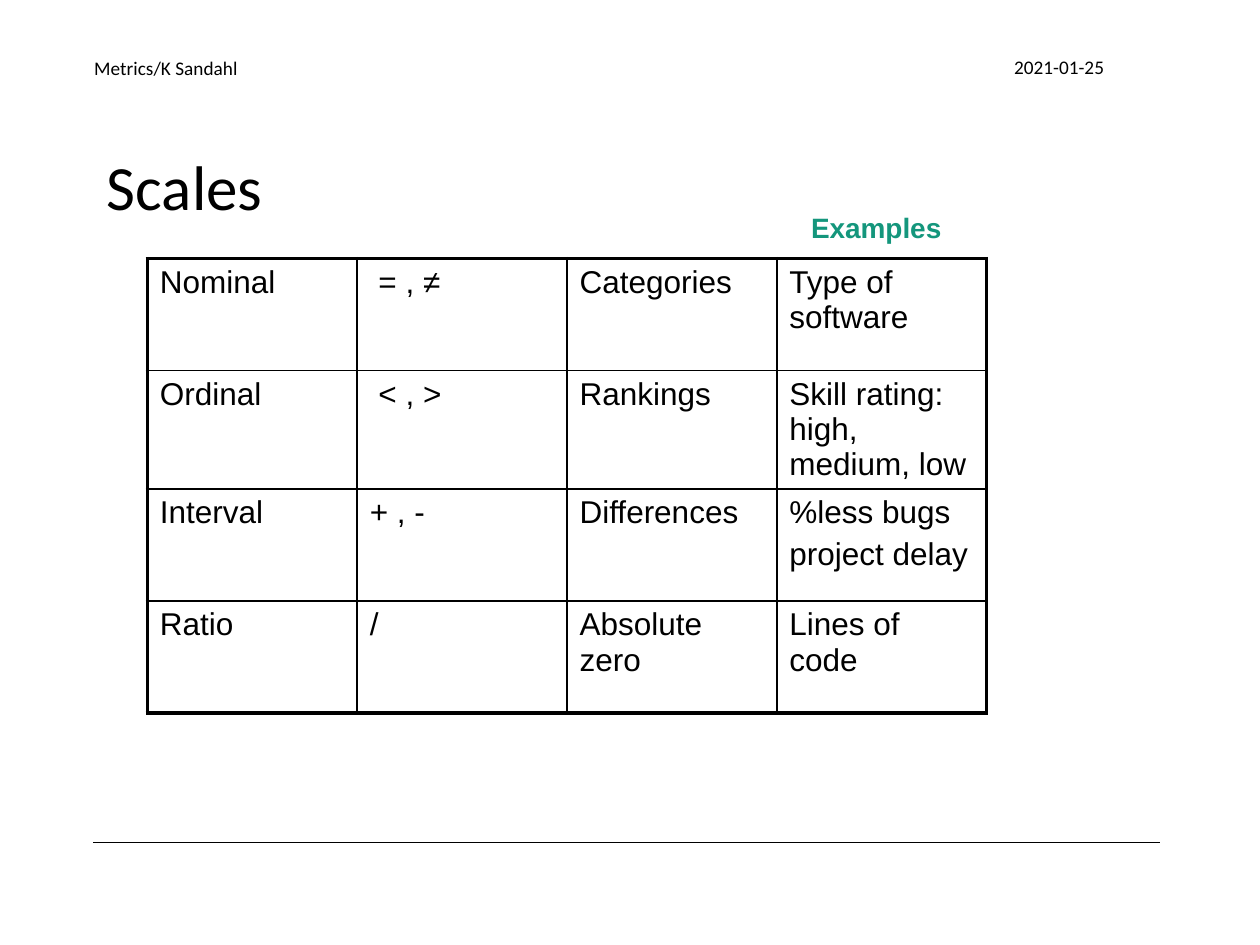
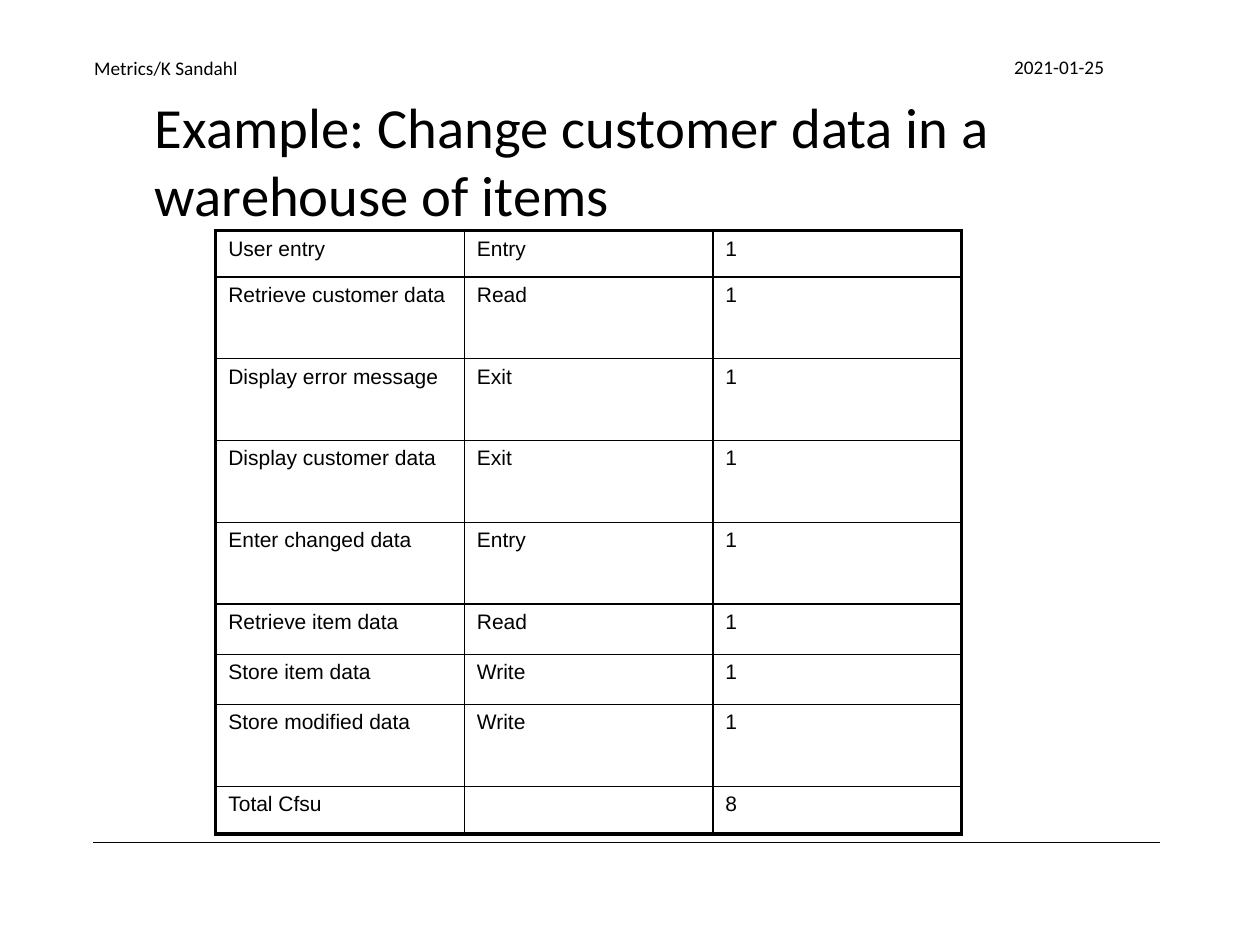
from lxml import etree
from pptx import Presentation
from pptx.dml.color import RGBColor
from pptx.enum.shapes import MSO_CONNECTOR
from pptx.enum.text import MSO_ANCHOR, MSO_AUTO_SIZE, PP_ALIGN
from pptx.oxml.ns import qn
from pptx.util import Cm, Pt

LEFT, RIGHT = PP_ALIGN.LEFT, PP_ALIGN.RIGHT
TOP, BOTTOM = MSO_ANCHOR.TOP, MSO_ANCHOR.BOTTOM
NO_FIT = MSO_AUTO_SIZE.NONE
STRAIGHT = MSO_CONNECTOR.STRAIGHT

COLORS = {"ink": "000000", "accent": "14967C"}
HEAD_FONT, BODY_FONT = "Calibri", "Arial"
THICK, THIN = 2.25, 1
TITLE_ONLY = 5

COURSE, DATE = "Metrics/K Sandahl", "2021-01-25"

SCALES = {
    "title": "Scales", "title_at": (1.9, 2.77), "title_size": 36,
    "table_at": (2.97, 5.21), "col_width": 4.23, "size": 18,
    "row_heights": [2.26] * 4,
    "rows": [
        ("Nominal", " = , ≠", "Categories", "Type of software"),
        ("Ordinal", " < , >", "Rankings", "Skill rating: high, medium, low"),
        ("Interval", "+ , -", "Differences", "%less bugs\nproject delay"),
        ("Ratio", "/", "Absolute zero", "Lines of code"),
    ],
}

SHORT, MEDIUM, TALL = 0.93, 1.01, 1.65
CUSTOMER_DATA = {
    "title": "Example: Change customer data in a warehouse of items",
    "title_at": (2.87, 1.65), "title_size": 32.4,
    "table_at": (4.35, 4.65), "col_width": 5.01, "size": 12,
    "row_heights": [SHORT] + [TALL] * 4 + [MEDIUM] * 2 + [TALL, SHORT],
    "rows": [
        ("User entry", "Entry", "1"),
        ("Retrieve customer data", "Read", "1"),
        ("Display error message", "Exit", "1"),
        ("Display customer data", "Exit", "1"),
        ("Enter changed data", "Entry", "1"),
        ("Retrieve item data", "Read", "1"),
        ("Store item data", "Write", "1"),
        ("Store modified data", "Write", "1"),
        ("Total Cfsu", "", "8"),
    ],
}


def write(tf, text, size, font=HEAD_FONT, color="ink", bold=False, align=LEFT):
    """Fill a text frame, one paragraph per line of text."""
    for i, line in enumerate(text.split("\n")):
        p = tf.add_paragraph() if i else tf.paragraphs[0]
        p.alignment = align
        p.space_before = Pt(0.2 * size if i else 0)
        r = p.add_run()
        r.text = line
        r.font.size, r.font.name, r.font.bold = Pt(size), font, bold
        r.font.color.rgb = RGBColor.from_string(COLORS[color])


def add_text(s, box, text, size, anchor=TOP, wrap=True, **style):
    tf = s.shapes.add_textbox(*map(Cm, box)).text_frame
    tf.word_wrap, tf.vertical_anchor = wrap, anchor
    write(tf, text, size, **style)


def set_borders(cell, widths):
    """Draw cell borders from a dict of side letter to width in points."""
    tc_pr = cell._tc.get_or_add_tcPr()
    for side, width in widths.items():
        ln = etree.SubElement(tc_pr, qn(f"a:ln{side}"), w=str(Pt(width)))
        fill = etree.SubElement(ln, qn("a:solidFill"))
        etree.SubElement(fill, qn("a:srgbClr"), val=COLORS["ink"])


def add_grid(s, content):
    """Add a table with thin inner lines and a thick outline."""
    rows, heights = content["rows"], content["row_heights"]
    n_rows, n_cols = len(rows), len(rows[0])
    x, y = content["table_at"]
    width = content["col_width"]
    table = s.shapes.add_table(n_rows, n_cols, Cm(x), Cm(y),
                               Cm(width * n_cols), Cm(sum(heights))).table
    table.first_row = table.horz_banding = False
    for col in table.columns:
        col.width = Cm(width)
    for i, (row, height) in enumerate(zip(rows, heights)):
        table.rows[i].height = Cm(height)
        for j, text in enumerate(row):
            cell = table.cell(i, j)
            outer = {"L": j == 0, "R": j == n_cols - 1,
                     "T": i == 0, "B": i == n_rows - 1}
            set_borders(cell, {k: THICK if edge else THIN for k, edge in outer.items()})
            cell.fill.background()
            write(cell.text_frame, text, content["size"], font=BODY_FONT)


def add_footer_line(s):
    line = s.shapes.add_connector(STRAIGHT, Cm(1.88), Cm(16.99), Cm(23.39), Cm(16.99))
    line.line.color.rgb = RGBColor.from_string(COLORS["ink"])
    line.line.width = Pt(0.75)
    etree.SubElement(line._element.spPr, qn("a:effectLst"))


def add_slide(prs, content):
    s = prs.slides.add_slide(prs.slide_layouts[TITLE_ONLY])
    add_footer_line(s)
    title = s.shapes.title
    title.left, title.top = map(Cm, content["title_at"])
    title.width, title.height = Cm(21.49), Cm(2.31)
    tf = title.text_frame
    tf.word_wrap, tf.auto_size, tf.vertical_anchor = True, NO_FIT, TOP
    tf.margin_top = Cm(0.2)
    write(tf, content["title"], content["title_size"])
    add_grid(s, content)
    add_text(s, (18.52, 0.99, 3.99, 0.74), DATE, 11, align=RIGHT)
    add_text(s, (1.65, 0.99, 16.2, 0.74), COURSE, 11, anchor=BOTTOM)
    return s


def main():
    prs = Presentation()
    prs.slide_width, prs.slide_height = Cm(25.4), Cm(19.05)
    s = add_slide(prs, SCALES)
    add_text(s, (16.1, 4.11, 3.18, 0.94), "Examples", 16, wrap=False,
             font=BODY_FONT, color="accent", bold=True)
    add_slide(prs, CUSTOMER_DATA)
    prs.save("out.pptx")


if __name__ == "__main__":
    main()
